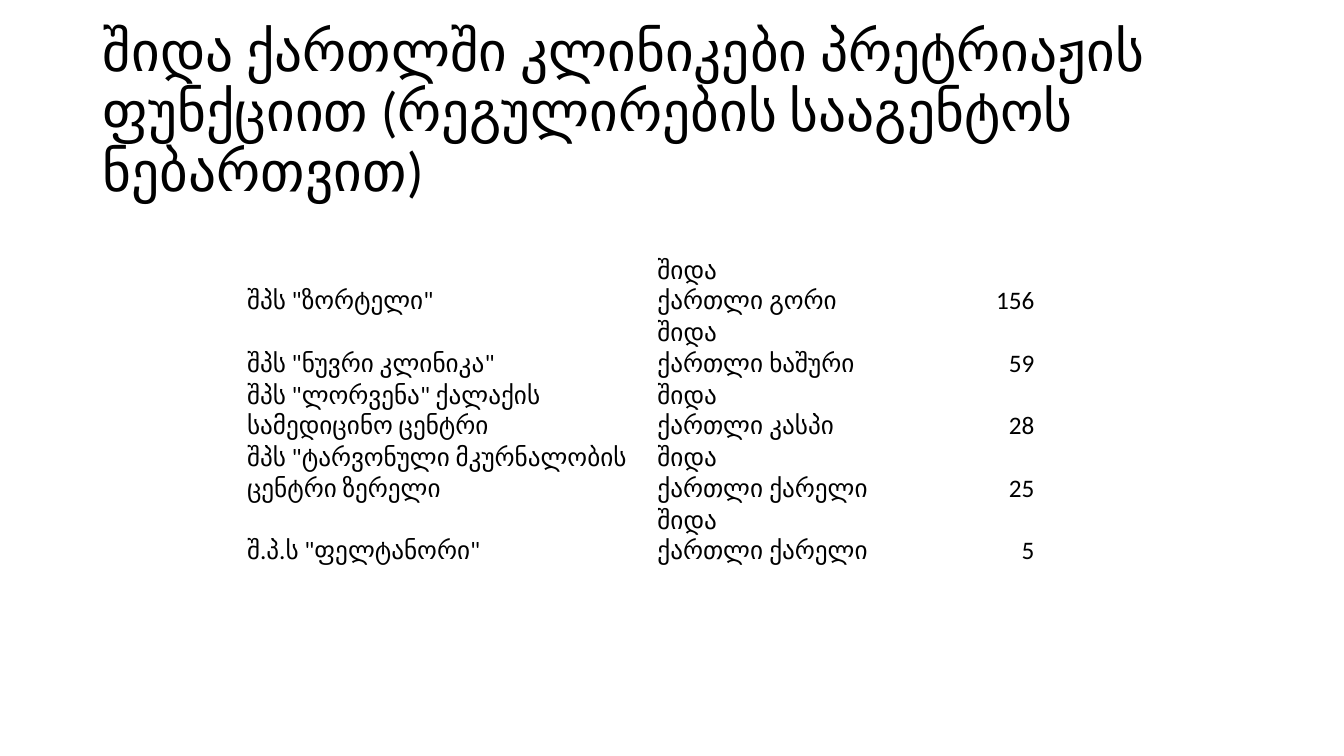
"""Build a slide listing the pretriage clinics of one region."""
import pptx
import pptx.util
import pptx.dml.color
import pptx.enum.text

Inches, Pt = pptx.util.Inches, pptx.util.Pt
ALIGN, ANCHOR = pptx.enum.text.PP_ALIGN, pptx.enum.text.MSO_ANCHOR

TITLE = "შიდა ქართლში კლინიკები პრეტრიაჟის ფუნქციით (რეგულირების სააგენტოს ნებართვით)"
REGION = "შიდა ქართლი"
CLINICS = [
    ('შპს "ზორტელი"', "გორი", 156),
    ('შპს "ნუვრი კლინიკა"', "ხაშური", 59),
    ('შპს "ლორვენა" ქალაქის სამედიცინო ცენტრი', "კასპი", 28),
    ('შპს "ტარვონული მკურნალობის ცენტრი ზერელი', "ქარელი", 25),
    ('შ.პ.ს "ფელტანორი"', "ქარელი", 5),
]
WIDTHS = [4.07, 1.11, 1.53, 1.12]
HIGH = 0.61
COLORS = {"text": "000000"}


def style(para, size, align):
    """Set the font and alignment of a paragraph."""
    para.alignment = align
    para.font.name = "Calibri"
    para.font.size = Pt(size)
    para.font.color.rgb = pptx.dml.color.RGBColor.from_string(COLORS["text"])


def add_title(slide):
    """Fill and place the title."""
    title = slide.shapes.title
    title.left, title.top = Inches(0.92), Inches(0.4)
    title.width, title.height = Inches(11.5), Inches(1.45)
    frame = title.text_frame
    frame.text = TITLE
    frame.word_wrap = True
    frame.auto_size = pptx.enum.text.MSO_AUTO_SIZE.NONE
    frame.vertical_anchor = ANCHOR.MIDDLE
    para = frame.paragraphs[0]
    para.line_spacing = 0.9
    style(para, 39.6, ALIGN.LEFT)


def add_clinics(slide):
    """Add the plain table of clinics."""
    table = slide.shapes.add_table(
        len(CLINICS), len(WIDTHS), Inches(2.44), Inches(2.52),
        Inches(sum(WIDTHS)), Inches(HIGH * len(CLINICS))).table
    table.first_row = table.horz_banding = False
    for col, width in zip(table.columns, WIDTHS):
        col.width = Inches(width)
    for row, (name, town, count) in zip(table.rows, CLINICS):
        row.height = Inches(HIGH)
        for cell, value in zip(row.cells, (name, REGION, town, count)):
            cell.text = str(value)
            cell.fill.background()
            cell.vertical_anchor = ANCHOR.BOTTOM
            cell.margin_left = cell.margin_right = cell.margin_top = Inches(0.01)
            cell.margin_bottom = 0
            align = ALIGN.RIGHT if value is count else ALIGN.LEFT
            style(cell.text_frame.paragraphs[0], 18, align)


def main():
    """Make and save the slide."""
    deck = pptx.Presentation()
    deck.slide_width, deck.slide_height = Inches(13.33), Inches(7.5)
    slide = deck.slides.add_slide(deck.slide_layouts[5])
    add_title(slide)
    add_clinics(slide)
    deck.save("out.pptx")


if __name__ == "__main__":
    main()
